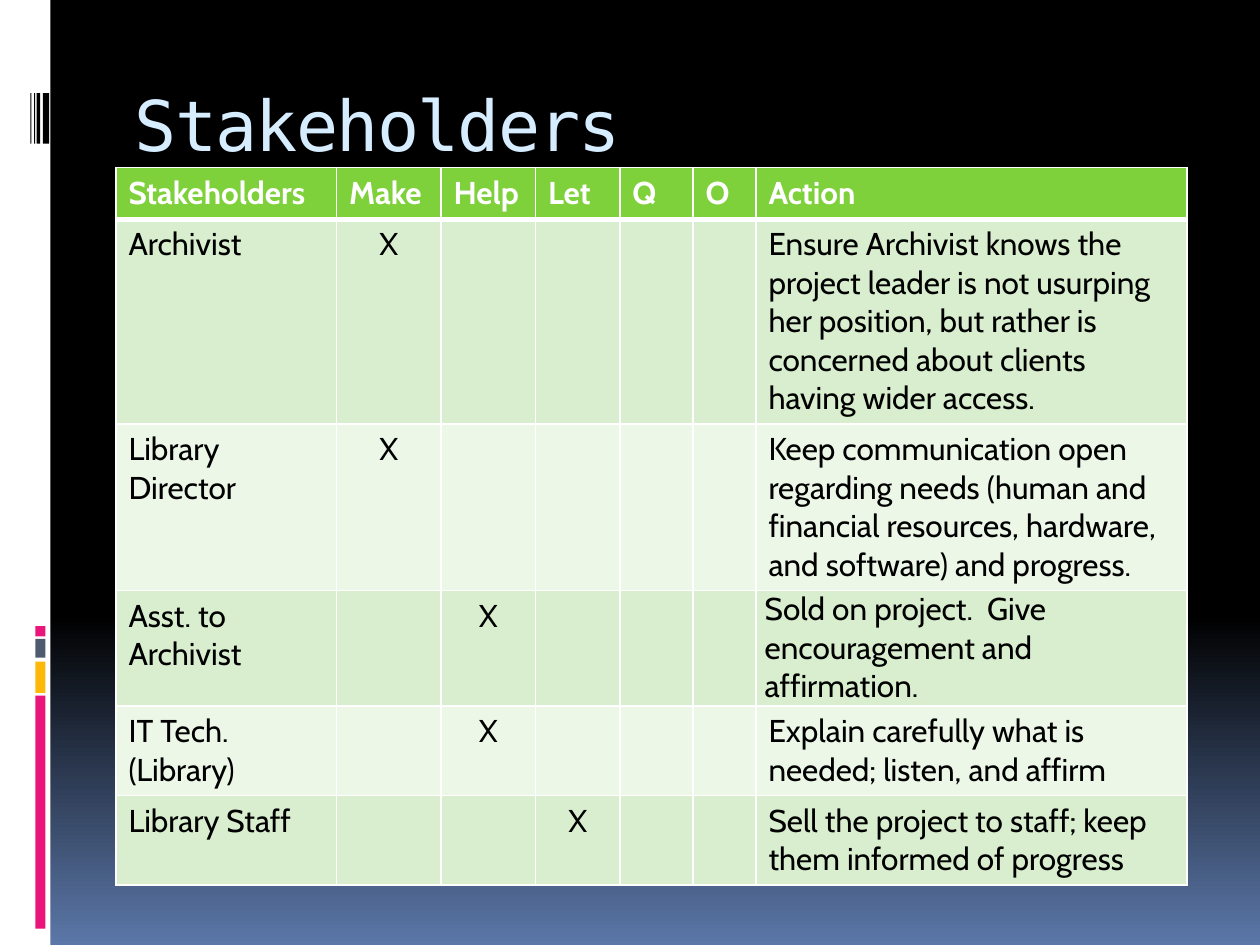
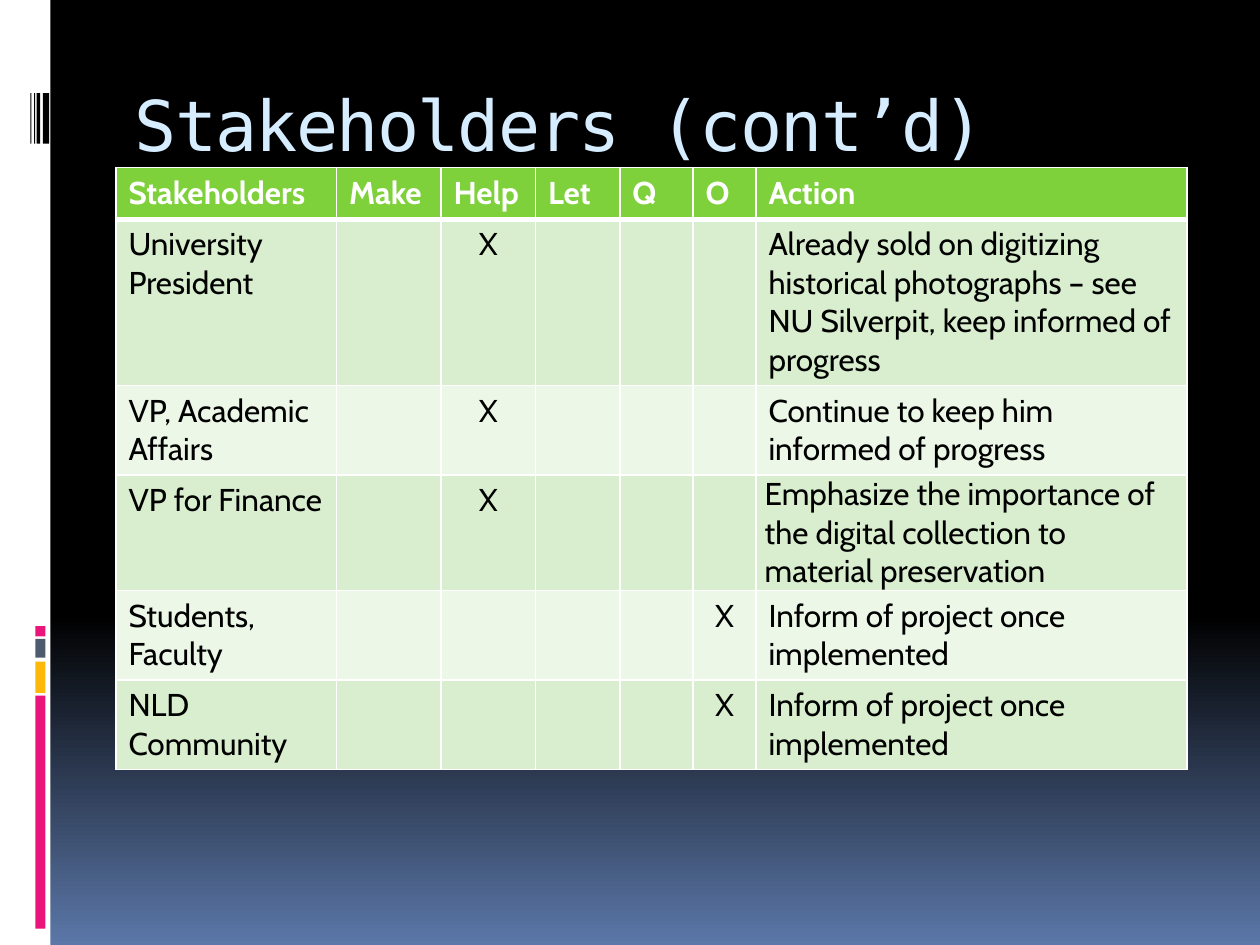
from copy import deepcopy
from lxml.etree import SubElement
from pptx import Presentation
from pptx.dml.color import RGBColor
from pptx.enum.shapes import MSO_SHAPE
from pptx.enum.text import MSO_ANCHOR, MSO_AUTO_SIZE, PP_ALIGN
from pptx.oxml.ns import qn
from pptx.util import Inches, Pt

HUES = {
    "black": "000000", "white": "FFFFFF", "blue": "5B77A8", "ice": "D6ECFF",
    "pink": "EA157A", "gold": "FEB80A", "slate": "4E5B6F",
    "head": "7FD13B", "odd": "D8EECE", "even": "ECF7E8",
}
SANS, MONO = "Cabin", "DejaVu Sans Mono"
WIDE, HIGH = 10, 7.5
HEADS = ["Stakeholders", "Make", "Help", "Let", "Q", "O", "Action"]
COLS = [1.75, 0.83, 0.75, 0.67, 0.58, 0.5, 3.42]
LEFT, TOP, ROW = 0.92, 1.33, 0.41
TIGHT = 3

BLOCKS = [("pink", 4.97, 0.08), ("slate", 5.07, 0.15),
          ("gold", 5.25, 0.25), ("pink", 5.52, 1.85)]
BARS = [(0.24, 0.01), (0.27, 0.01), (0.29, 0.03), (0.34, 0.05)]

PAGES = [
    ("Stakeholders", [
        ("Archivist", "Make", "Ensure Archivist knows the project leader is not usurping "
         "her position, but rather is concerned about clients having wider access."),
        ("Library Director", "Make", "Keep communication open regarding needs (human and "
         "financial resources, hardware, and software) and progress."),
        ("Asst. to Archivist", "Help",
         "Sold on project.  Give encouragement and affirmation."),
        ("IT Tech. (Library)", "Help",
         "Explain carefully what is needed; listen, and affirm"),
        ("Library Staff", "Let",
         "Sell the project to staff; keep them informed of progress"),
    ]),
    ("Stakeholders (cont’d)", [
        ("University President", "Help", "Already sold on digitizing historical "
         "photographs – see NU Silverpit, keep informed of progress"),
        ("VP, Academic Affairs", "Help", "Continue to keep him informed of progress"),
        ("VP for Finance", "Help", "Emphasize the importance of the digital collection "
         "to material preservation"),
        ("Students, Faculty", "O", "Inform of project once implemented"),
        ("NLD Community", "O", "Inform of project once implemented"),
    ]),
]


def tint(name):
    return RGBColor.from_string(HUES[name])


def style(run, face, size, hue, bold=False):
    font = run.font
    font.name, font.size, font.bold = face, Pt(size), bold
    font.color.rgb = tint(hue)


def backdrop(master):
    fill = master.background.fill
    fill.gradient()
    fill.gradient_angle = 270
    first = master.element.find(".//" + qn("a:gsLst"))[0]
    first.addnext(deepcopy(first))
    stops = [("black", 0), ("black", 0.65), ("blue", 1)]
    for stop, (hue, place) in zip(fill.gradient_stops, stops):
        stop.color.rgb = tint(hue)
        stop.position = place


def block(slide, hue, *place):
    shape = slide.shapes.add_shape(MSO_SHAPE.RECTANGLE, *map(Inches, place))
    shape.shadow.inherit = False
    shape.fill.solid()
    shape.fill.fore_color.rgb = tint(hue)
    shape.line.fill.background()


def band(slide):
    block(slide, "white", 0, 0, WIDE * 0.04, HIGH)
    for hue, top, tall in BLOCKS:
        block(slide, hue, 0.28, top, 0.08, tall)
    for left, thick in BARS:
        block(slide, "black", left, 0.74, thick, 0.4)


def heading(slide, text):
    title = slide.shapes.title
    title.left, title.top = Inches(1), Inches(0.56)
    title.width, title.height = Inches(8.5), Inches(0.69)
    frame = title.text_frame
    frame.text = text
    frame.auto_size = MSO_AUTO_SIZE.NONE
    frame.vertical_anchor = MSO_ANCHOR.TOP
    frame.margin_left, frame.margin_top = Inches(0.07), Inches(0.09)
    para = frame.paragraphs[0]
    para.alignment = PP_ALIGN.LEFT
    run = para.runs[0]
    style(run, MONO, 40, "ice")
    run._r.get_or_add_rPr().set("spc", "-100")


def edges(cell, top, base):
    props = cell._tc.get_or_add_tcPr()
    sides = [("L", 1), ("R", 1), ("T", top), ("B", base)]
    for spot, (side, width) in enumerate(sides):
        line = SubElement(props, qn("a:ln" + side), w=str(Pt(width)))
        solid = SubElement(line, qn("a:solidFill"))
        SubElement(solid, qn("a:srgbClr"), val=HUES["white"])
        props.insert(spot, line)


def paint(cell, text, row, col):
    cell.fill.solid()
    hue = "head" if row == 0 else ("odd" if row % 2 else "even")
    cell.fill.fore_color.rgb = tint(hue)
    edges(cell, 3 if row == 1 else 1, 3 if row == 0 else 1)
    if not text:
        return
    cell.text = text
    para = cell.text_frame.paragraphs[0]
    style(para.runs[0], SANS, 18, "black" if row else "white", row == 0)
    if row and 0 < col < len(COLS) - 1:
        para.alignment = PP_ALIGN.CENTER
    if row == TIGHT and col == len(COLS) - 1:
        cell.margin_left = cell.margin_right = Inches(0.07)
        cell.margin_top = cell.margin_bottom = 0


def grid(slide, people):
    rows = [HEADS]
    for who, level, deed in people:
        marks = ["X" if head == level else "" for head in HEADS[1:-1]]
        rows.append([who, *marks, deed])
    place = map(Inches, (LEFT, TOP, sum(COLS), ROW * len(rows)))
    table = slide.shapes.add_table(len(rows), len(COLS), *place).table
    for column, width in zip(table.columns, COLS):
        column.width = Inches(width)
    for row, texts in enumerate(rows):
        for col, text in enumerate(texts):
            paint(table.cell(row, col), text, row, col)


def main():
    deck = Presentation()
    deck.slide_width, deck.slide_height = Inches(WIDE), Inches(HIGH)
    backdrop(deck.slide_master)
    for title, people in PAGES:
        slide = deck.slides.add_slide(deck.slide_layouts[5])
        band(slide)
        heading(slide, title)
        grid(slide, people)
    deck.save("out.pptx")


if __name__ == "__main__":
    main()
